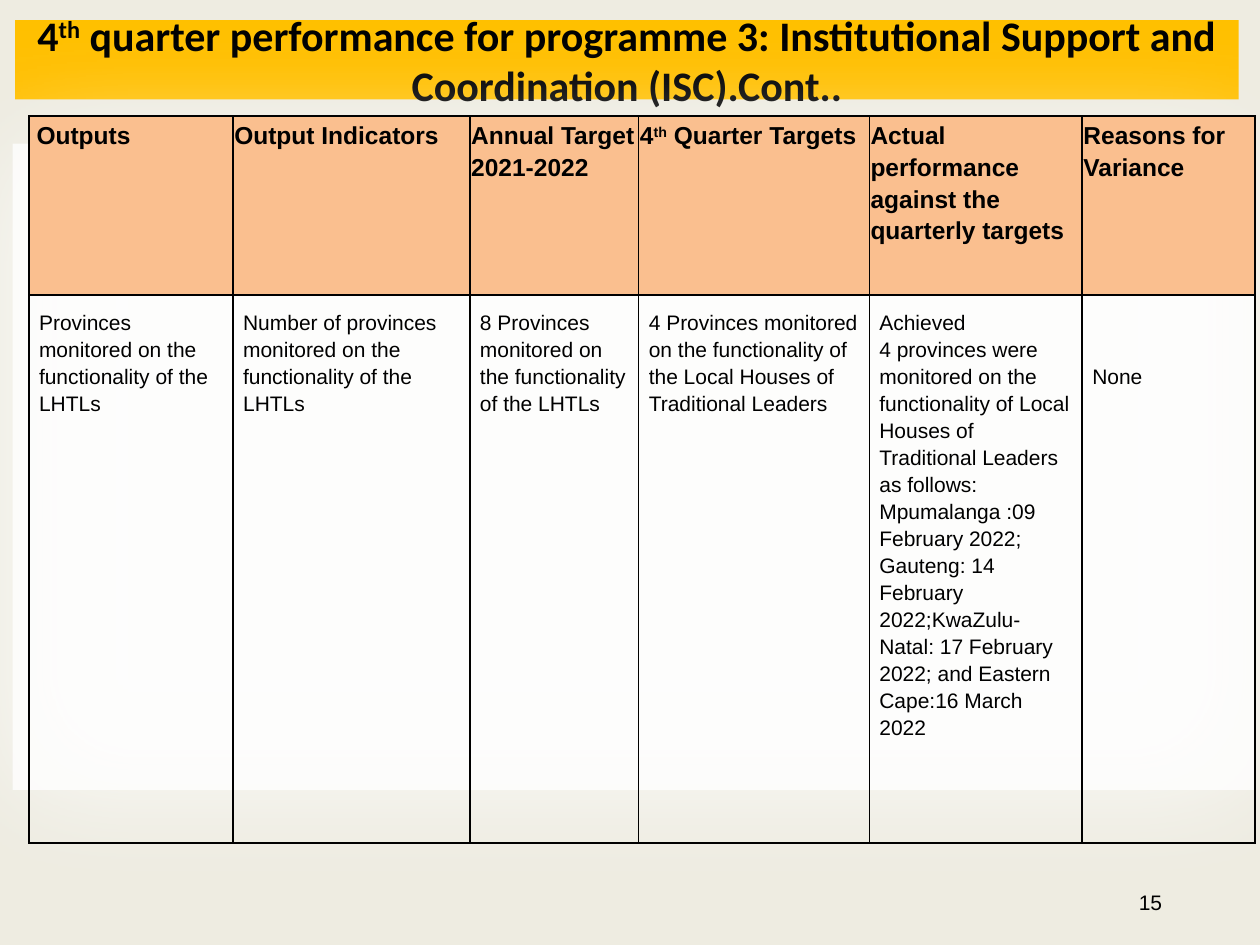
from lxml import etree
from pptx import Presentation
from pptx.dml.color import RGBColor
from pptx.enum.shapes import MSO_SHAPE
from pptx.enum.text import MSO_ANCHOR, PP_ALIGN
from pptx.oxml.ns import qn
from pptx.util import Inches, Pt

RECTANGLE = MSO_SHAPE.RECTANGLE
MIDDLE = MSO_ANCHOR.MIDDLE
CENTER, JUSTIFY = PP_ALIGN.CENTER, PP_ALIGN.JUSTIFY

TITLE = [("4", 0), ("th", 30),
         (" quarter performance for programme 3: Institutional Support and "
          "Coordination (ISC).Cont..", 0)]
COLUMN_WIDTHS = [1.62, 1.88, 1.34, 1.83, 1.69, 1.37]
ROW_HEIGHTS = [1.42, 4.35]

# Each cell is a list of paragraphs; a paragraph is a list of (text, baseline)
HEADINGS = [
    [[("Outputs", 0)]],
    [[("Output Indicators", 0)]],
    [[("Annual Target", 0)], [("2021-2022", 0)]],
    [[("4", 0), ("th", 30), (" Quarter Targets", 0)]],
    [[("Actual performance against the quarterly targets", 0)]],
    [[("Reasons for Variance", 0)]],
]
RESULTS = [
    [[("Provinces monitored on the functionality of the LHTLs", 0)]],
    [[("Number of provinces monitored on the functionality of the LHTLs", 0)]],
    [[("8 Provinces monitored on the functionality of the LHTLs", 0)]],
    [[("4 Provinces monitored on the functionality of the Local Houses of "
       "Traditional Leaders", 0)]],
    [[("Achieved", 0)],
     [("4 provinces were monitored on the functionality of Local Houses of "
       "Traditional Leaders as follows:", 0)],
     [("Mpumalanga :09 February 2022; Gauteng: 14 February 2022;KwaZulu-Natal: "
       "17 February 2022; and Eastern Cape:16 March 2022", 0)]],
    [[("None", 0)]],
]


def color(value):
    return RGBColor.from_string(value)


def write(paragraph, pieces, size, font="Arial", bold=False):
    paragraph.font.size = Pt(size)
    paragraph.font.name = font
    paragraph.font.bold = bold
    paragraph.font.color.rgb = color("000000")
    for text, baseline in pieces:
        run = paragraph.add_run()
        run.text = text
        if baseline:
            run.font._element.set("baseline", str(baseline * 1000))


def add_rectangle(slide, left, top, width, height, fill):
    rectangle = slide.shapes.add_shape(
        RECTANGLE, Inches(left), Inches(top), Inches(width), Inches(height))
    rectangle.shadow.inherit = False
    rectangle.fill.solid()
    rectangle.fill.fore_color.rgb = color(fill)
    rectangle.line.fill.background()
    return rectangle


def add_alpha(color_element, percent):
    etree.SubElement(color_element, qn("a:alpha"), val=str(percent * 1000))


def add_title(slide):
    banner = add_rectangle(slide, 0.12, 0.16, 9.71, 0.63, "FFC000")
    frame = banner.text_frame
    frame.word_wrap = True
    frame.vertical_anchor = MIDDLE
    heading = frame.paragraphs[0]
    heading.alignment = CENTER
    write(heading, TITLE, 24, "Calibri", True)


def add_glowing_panel(slide):
    panel = add_rectangle(slide, 0.1, 1.14, 9.86, 5.13, "FFFFFF")
    properties = panel._element.spPr
    add_alpha(properties.find(qn("a:solidFill"))[0], 79)
    # Soft white shadow that lightens the surroundings
    shadow = etree.SubElement(
        properties.find(qn("a:effectLst")), qn("a:outerShdw"),
        blurRad=str(Pt(72)), dist=str(Pt(4)), dir=str(90 * 60000),
        algn="ctr", rotWithShape="0")
    add_alpha(etree.SubElement(shadow, qn("a:srgbClr"), val="FFFFFF"), 93)


def add_borders(cell):
    properties = cell._tc.get_or_add_tcPr()
    for side in ("lnL", "lnR", "lnT", "lnB"):
        border = etree.SubElement(properties, qn(f"a:{side}"), w=str(Pt(1)))
        fill = etree.SubElement(border, qn("a:solidFill"))
        etree.SubElement(fill, qn("a:srgbClr"), val="000000")


def fill_cell(cell, paragraphs, size, bold, side_margin, top_margin):
    cell.margin_left = cell.margin_right = Inches(side_margin)
    cell.margin_top, cell.margin_bottom = Inches(top_margin), 0
    frame = cell.text_frame
    for index, pieces in enumerate(paragraphs):
        paragraph = frame.add_paragraph() if index else frame.paragraphs[0]
        paragraph.line_spacing = 1.15
        write(paragraph, pieces, size, bold=bold)
    add_borders(cell)


def add_performance_table(slide):
    table = slide.shapes.add_table(
        len(ROW_HEIGHTS), len(COLUMN_WIDTHS), Inches(0.23), Inches(0.92),
        Inches(sum(COLUMN_WIDTHS)), Inches(sum(ROW_HEIGHTS))).table
    table.first_row = table.horz_banding = False
    for column, width in zip(table.columns, COLUMN_WIDTHS):
        column.width = Inches(width)
    for row, height in zip(table.rows, ROW_HEIGHTS):
        row.height = Inches(height)
    for index, (heading, result) in enumerate(zip(HEADINGS, RESULTS)):
        heading_cell, result_cell = table.cell(0, index), table.cell(1, index)
        fill_cell(heading_cell, heading, 14, True, 0.01, 0.02)
        heading_cell.fill.solid()
        heading_cell.fill.fore_color.rgb = color("FABF8F")
        fill_cell(result_cell, result, 12, False, 0.08, 0.1)
        result_cell.fill.background()
    # The first heading is slightly indented, the last result sits lower
    table.cell(0, 0).margin_left = Inches(0.06)
    variance = table.cell(1, len(COLUMN_WIDTHS) - 1)
    variance.margin_top = Inches(0.53)
    variance.text_frame.paragraphs[0].alignment = JUSTIFY


def add_page_number(slide):
    box = slide.shapes.add_textbox(
        Inches(8.94), Inches(7.01), Inches(0.6), Inches(0.3))
    box.text_frame.word_wrap = True
    write(box.text_frame.paragraphs[0], [("15", 0)], 12)


def main():
    presentation = Presentation()
    presentation.slide_width, presentation.slide_height = Inches(10), Inches(7.5)
    slide = presentation.slides.add_slide(presentation.slide_layouts[6])
    slide.background.fill.solid()
    slide.background.fill.fore_color.rgb = color("EEECE1")
    add_title(slide)
    add_glowing_panel(slide)
    add_performance_table(slide)
    add_page_number(slide)
    presentation.save("out.pptx")


if __name__ == "__main__":
    main()
